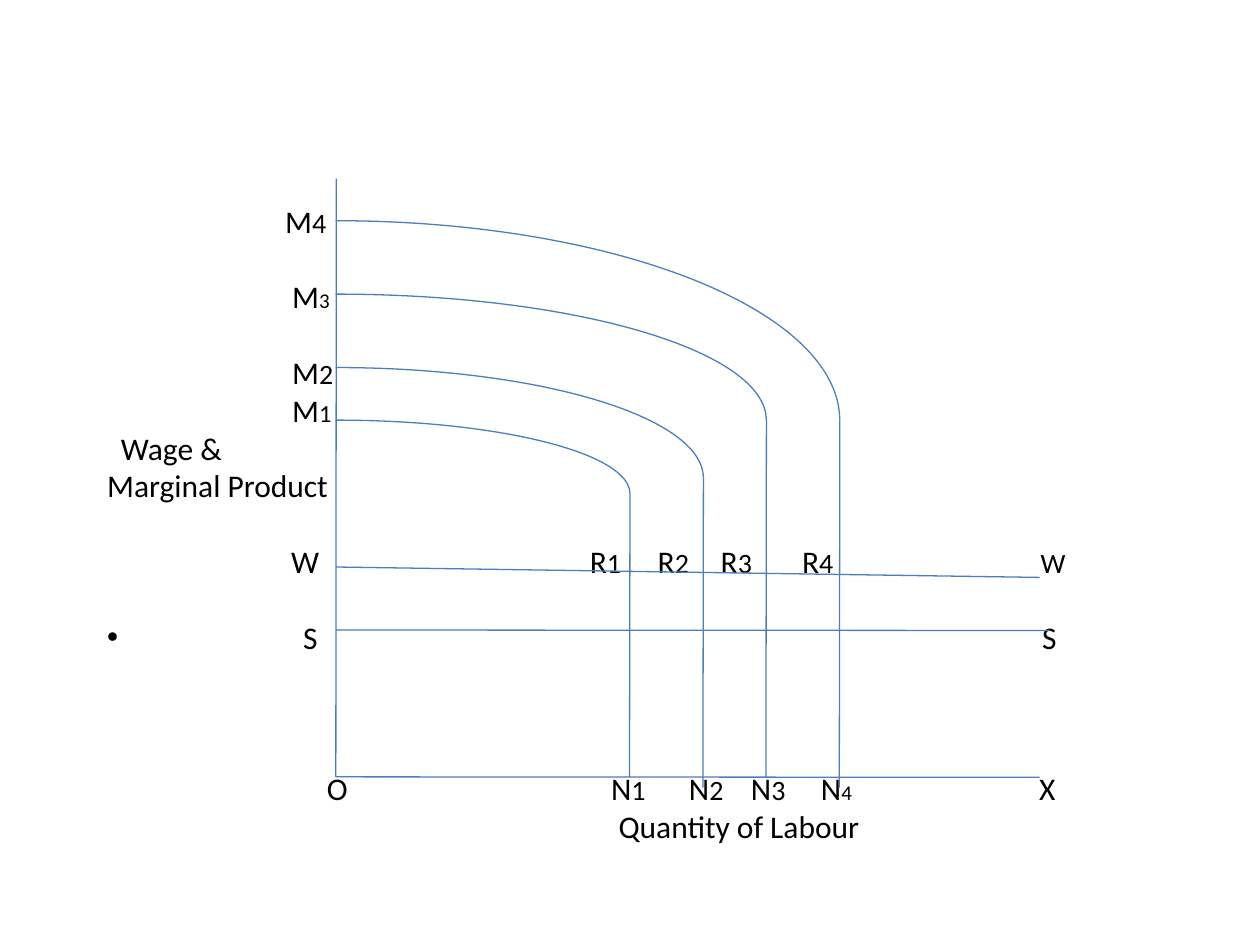
from lxml.etree import SubElement
from pptx import Presentation
from pptx.dml.color import RGBColor
from pptx.enum.shapes import MSO_CONNECTOR, MSO_SHAPE
from pptx.oxml.ns import qn
from pptx.util import Cm, Pt

COLORS = {"line": "4B7EBC", "text": "000000"}
FONT = "Calibri"
PITCH = 21.6              # height of a text row, points
EDGE = 2.16               # left edge of the text, cm
LEFT, BASE = 6.77, 15.66  # origin of the axes, cm
SLANT = 0.01              # slight lean of the axes and drop lines, cm

# Curves: top, bottom of the arc, right edge, foot of the drop line
CURVES = [
    (8.47, 11.43, 12.7, BASE),
    (7.41, 11.85, 14.18, 15.88),
    (5.93, 11.01, 15.45, BASE),
    (4.45, 12.5, 16.93, 15.88),
]
# Straight lines: x1, y1, x2, y2
LINES = [
    (LEFT + SLANT, 3.6, LEFT, BASE),
    (LEFT, BASE, 20.96, BASE + SLANT),
    (LEFT, 11.43, 20.96, 11.64),
    (LEFT, 12.7, 21.17, 12.7 + SLANT),
]
# Text rows: free rows above, then items of (left, (text, size), ...)
ROWS = [
    (0, [(5.75, ("M", 18), ("4", 16))]),
    (1, [(5.89, ("M", 18), ("3", 12))]),
    (1, [(5.89, ("M", 18), ("2", 16))]),
    (0, [(5.89, ("M", 18), ("1", 14))]),
    (0, [(2.44, ("Wage &", 18))]),
    (0, [(EDGE, ("Marginal Product", 18))]),
    (1, [(5.87, ("W", 18)),
         (11.89, ("R", 18), ("1", 16)), (13.26, ("R", 18), ("2", 16)),
         (14.53, ("R", 18), ("3", 16)), (16.17, ("R", 18), ("4", 16)),
         (20.98, ("W", 16))]),
    (1, [(6.11, ("S", 18)), (21.01, ("S", 18))]),
    (3, [(6.59, ("O", 18)),
         (12.32, ("N", 18), ("1", 16)), (13.89, ("N", 18), ("2", 16)),
         (15.14, ("N", 18), ("3", 16)), (16.55, ("N", 18), ("4", 12)),
         (20.95, ("X", 18))]),
    (0, [(12.47, ("Quantity of Labour", 18))]),
]
DOTTED = 7  # the row with a bullet


def paint(line):
    line.color.rgb = RGBColor.from_string(COLORS["line"])
    line.width = Pt(0.75)


def add_line(slide, x1, y1, x2, y2):
    line = slide.shapes.add_connector(
        MSO_CONNECTOR.STRAIGHT, Cm(x1), Cm(y1), Cm(x2), Cm(y2))
    paint(line.line)
    SubElement(line._element.spPr, qn("a:effectLst"))


def add_curve(slide, top, low, right, foot):
    """Draw a quarter arc from the wage axis and its drop line."""
    half = right - LEFT
    arc = slide.shapes.add_shape(
        MSO_SHAPE.ARC, Cm(LEFT - half), Cm(top), Cm(2 * half), Cm(low - top))
    arc.shadow.inherit = False
    arc.fill.background()
    paint(arc.line)
    add_line(slide, right, (top + low) / 2, right - SLANT, foot)


def add_run(para, text, size):
    run = para.add_run()
    run.text = text
    run.font.name = FONT
    run.font.size = Pt(size)
    run.font.color.rgb = RGBColor.from_string(COLORS["text"])


def fill_row(para, gap, items, dot):
    """Set the items of one row at tab stops."""
    para.space_before = Pt(gap * PITCH)
    props = para._p.get_or_add_pPr()
    if dot:
        SubElement(props, qn("a:buFont")).set("typeface", "Arial")
        SubElement(props, qn("a:buChar")).set("char", "•")
    tabs = SubElement(props, qn("a:tabLst"))
    for left, *parts in items:
        if left > EDGE:
            stop = SubElement(tabs, qn("a:tab"))
            stop.set("pos", str(Cm(left - EDGE)))
            stop.set("algn", "l")
            head, size = parts[0]
            parts[0] = ("\t" + head, size)
        for text, size in parts:
            add_run(para, text, size)


def add_labels(slide):
    box = slide.shapes.add_textbox(Cm(1.9), Cm(3.18), Cm(21.8), Cm(15.64))
    frame = box.text_frame
    frame.word_wrap = True
    frame.margin_left = Cm(EDGE - 1.9)
    frame.margin_top = Cm(0.89)
    for i, (gap, items) in enumerate(ROWS):
        para = frame.add_paragraph() if i else frame.paragraphs[0]
        fill_row(para, gap, items, i == DOTTED)


def main():
    deck = Presentation()
    deck.slide_width, deck.slide_height = Cm(25.4), Cm(19.05)
    slide = deck.slides.add_slide(deck.slide_layouts[6])

    # Labels
    add_labels(slide)

    # Axes and wage lines, then marginal product curves
    for ends in LINES:
        add_line(slide, *ends)
    for curve in CURVES:
        add_curve(slide, *curve)

    deck.save("out.pptx")


if __name__ == "__main__":
    main()
